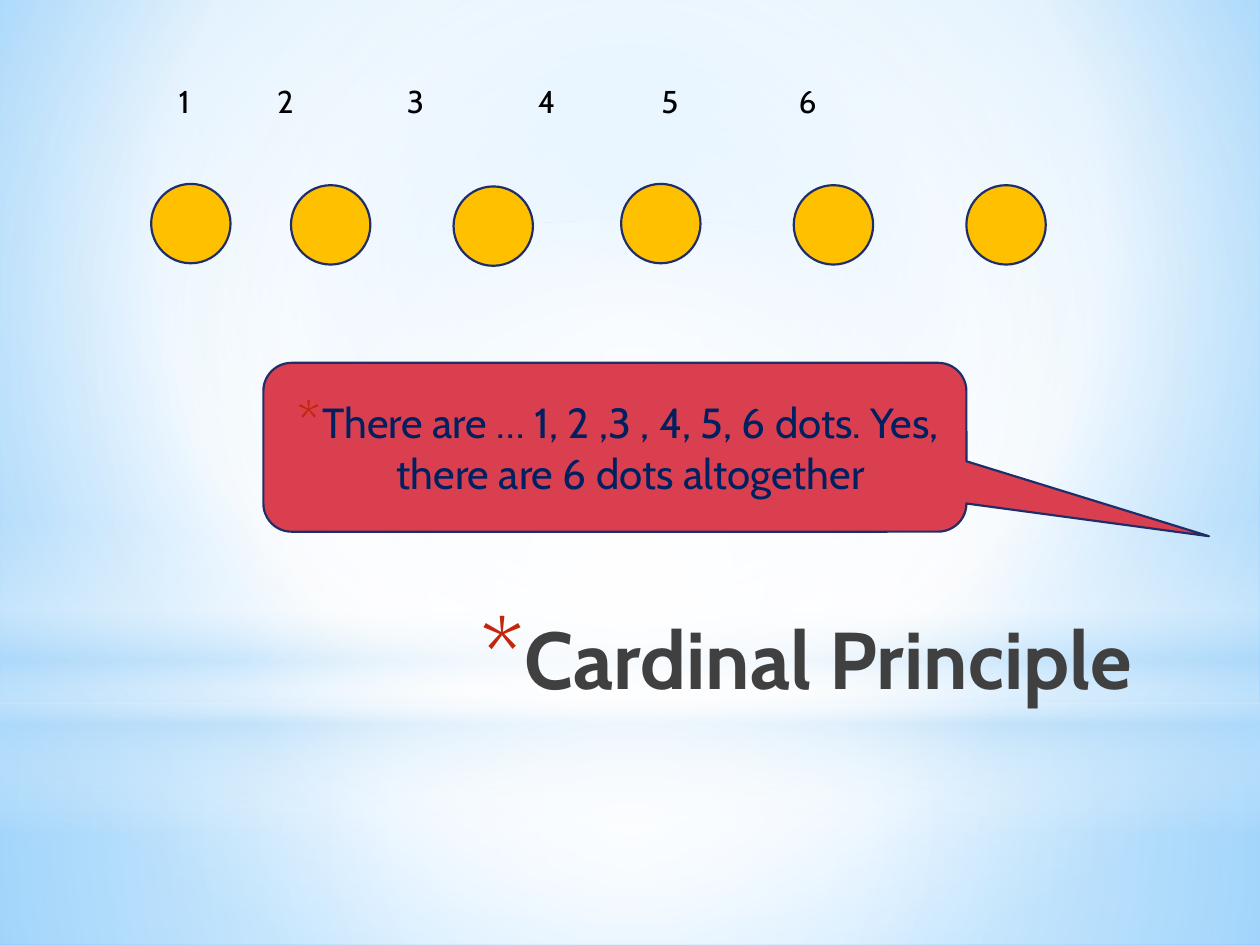
from lxml.etree import SubElement
from pptx import Presentation
from pptx.dml.color import RGBColor
from pptx.enum.shapes import MSO_SHAPE
from pptx.enum.text import MSO_ANCHOR, MSO_AUTO_SIZE, PP_ALIGN
from pptx.oxml.ns import qn
from pptx.util import Inches, Pt

color = RGBColor.from_string


def blend(fill, root, stops, rect=None):
    fill.gradient()
    grad = next(root.iter(qn("a:gradFill")))
    for child in list(grad):
        grad.remove(child)
    group = SubElement(grad, qn("a:gsLst"))
    for pos, tint, alpha in stops:
        stop = SubElement(group, qn("a:gs"), pos=str(pos * 1000))
        rgb = SubElement(stop, qn("a:srgbClr"), val=tint)
        if alpha < 100:
            SubElement(rgb, qn("a:alpha"), val=str(alpha * 1000))
    if rect:
        path = SubElement(grad, qn("a:path"), path="circle")
        edges = {side: str(part * 1000) for side, part in zip("ltrb", rect)}
        SubElement(path, qn("a:fillToRect"), edges)
    else:
        SubElement(grad, qn("a:lin"), ang="5400000", scaled="0")


def star(para, left, hang, size):
    props = para._p.get_or_add_pPr()
    props.set("marL", str(Inches(left)))
    props.set("indent", str(Inches(-hang)))
    tint = SubElement(props, qn("a:buClr"))
    SubElement(tint, qn("a:srgbClr"), val="C3260C")
    SubElement(props, qn("a:buSzPct"), val=str(size * 1000))
    SubElement(props, qn("a:buFont"), typeface="Cabin")
    SubElement(props, qn("a:buChar"), char="*")


prs = Presentation()
prs.slide_width, prs.slide_height = Inches(10), Inches(7.5)
slide = prs.slides.add_slide(prs.slide_layouts[5])
shapes = slide.shapes

blend(slide.background.fill, slide.element,
      [(0, "9ED5FF", 100), (60, "FFFFFF", 100), (100, "5BB9FF", 100)],
      (20, 10, 20, 60))

mid = (50, 50, 50, 50)
glows = [
    (MSO_SHAPE.RECTANGLE, 5.58, 1.92, mid,
     [(0, "FFFFFF", 91), (37, "FFFFFF", 76), (100, "B4DCFA", 79)]),
    (MSO_SHAPE.RECTANGLE, 0, 5.58, mid,
     [(0, "FFFFFF", 89), (48, "FFFFFF", 62), (100, "B4DCFA", 79)]),
    (MSO_SHAPE.RECTANGLE, 4.12, 2.5, None,
     [(0, "FFFFFF", 0), (29, "FFFFFF", 30), (45, "B4DCFA", 40),
      (55, "FFFFFF", 26), (65, "B4DCFA", 60), (100, "FFFFFF", 0)]),
    (MSO_SHAPE.OVAL, 1.75, 5.58, mid,
     [(0, "FFFFFF", 100), (56, "FFFFFF", 0)]),
]
for kind, top, height, rect, stops in glows:
    glow = shapes.add_shape(kind, 0, Inches(top), Inches(10), Inches(height))
    glow.shadow.inherit = False
    glow.line.fill.background()
    blend(glow.fill, glow.element, stops, rect)

title = shapes.title
shapes.element.append(title.element)
title.left, title.top = Inches(1.96), Inches(4.78)
title.width, title.height = Inches(7.12), Inches(1.25)
frame = title.text_frame
frame.text = "Cardinal Principle"
frame.auto_size = MSO_AUTO_SIZE.NONE
frame.vertical_anchor = MSO_ANCHOR.TOP
para = frame.paragraphs[0]
para.alignment = PP_ALIGN.RIGHT
star(para, 0.35, 0.35, 128)
para.font.name, para.font.size, para.font.bold = "Cabin", Pt(46), True
para.font.color.rgb = color("404040")

bubble = shapes.add_shape(MSO_SHAPE.ROUNDED_RECTANGULAR_CALLOUT, Inches(2.09),
                          Inches(2.88), Inches(5.58), Inches(1.34))
for spot, value in enumerate((0.845, 0.527, 0.167)):
    bubble.adjustments[spot] = value
frame = bubble.text_frame
frame.text = ("There are … 1, 2 ,3 , 4, 5, 6 dots. "
              "Yes, there are 6 dots altogether")
frame.word_wrap = True
frame.vertical_anchor = MSO_ANCHOR.MIDDLE
para = frame.paragraphs[0]
para.alignment = PP_ALIGN.CENTER
para.space_after = Pt(3)
star(para, 0.25, 0.2, 130)
para.font.name, para.font.size = "Cabin", Pt(24)
para.font.color.rgb = color("002060")

solids = [(bubble, "D93F4E")]
dots = [(1.2, 1.46), (2.31, 1.47), (3.6, 1.48),
        (4.93, 1.46), (6.3, 1.47), (7.67, 1.47)]
for left, top in dots:
    dot = shapes.add_shape(MSO_SHAPE.OVAL, Inches(left), Inches(top),
                           Inches(0.63), Inches(0.63))
    solids.append((dot, "FFC000"))
for shape, tint in solids:
    shape.shadow.inherit = False
    shape.fill.solid()
    shape.fill.fore_color.rgb = color(tint)
    shape.line.color.rgb = color("1F2E69")
    shape.line.width = Pt(1.25)

count = shapes.add_textbox(Inches(1.22), Inches(0.6), Inches(7.01), Inches(0.4))
frame = count.text_frame
frame.word_wrap = True
frame.text = "\t1\t2\t3\t4\t5\t6"
para = frame.paragraphs[0]
tabs = SubElement(para._p.get_or_add_pPr(), qn("a:tabLst"))
for stop in (0.1, 0.88, 1.91, 2.95, 3.93, 5.02):
    SubElement(tabs, qn("a:tab"), pos=str(Inches(stop)), algn="l")
para.font.name, para.font.size = "Cabin", Pt(18)
para.font.color.rgb = color("000000")

prs.save("out.pptx")
